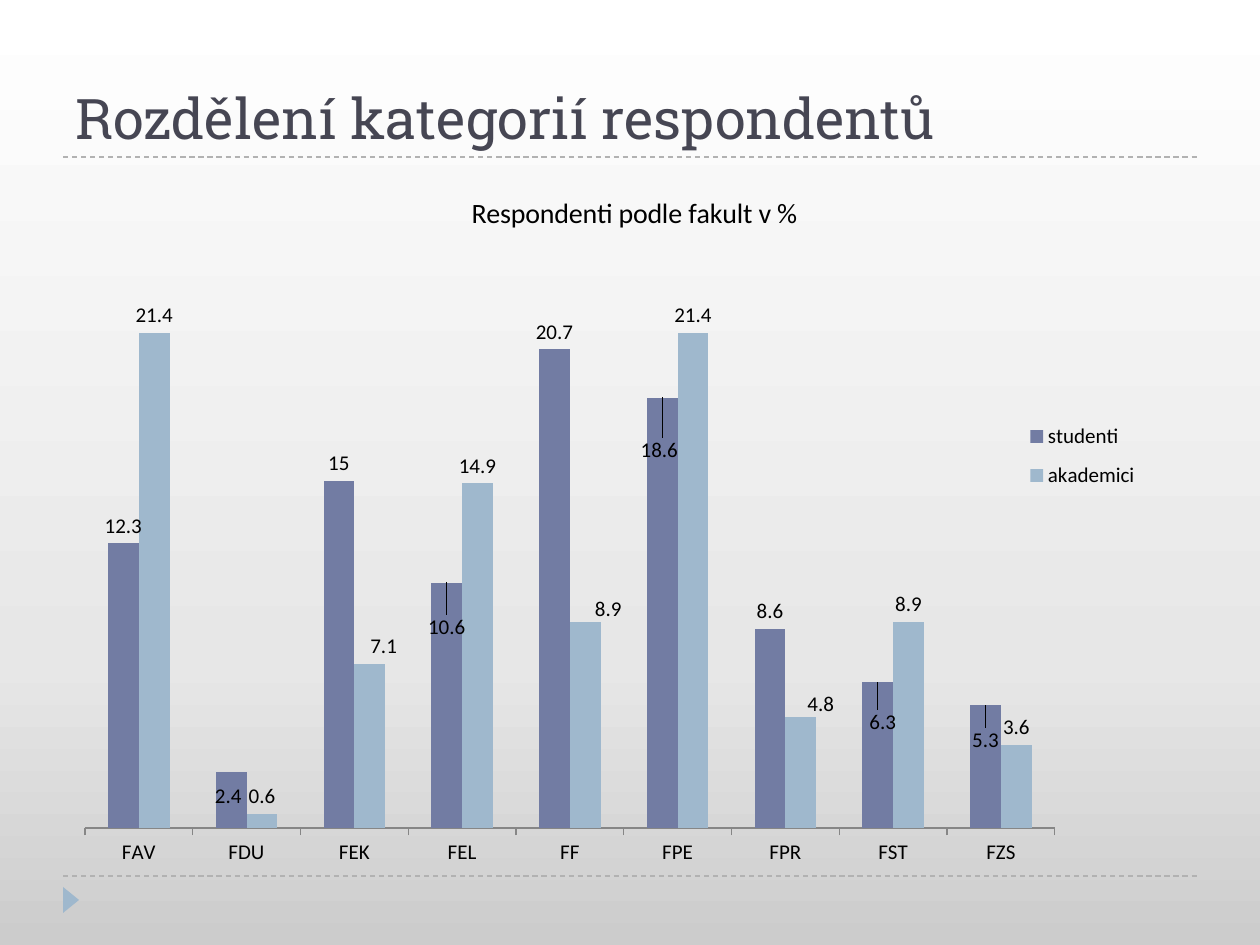
import copy

import pptx
import pptx.chart.data
import pptx.dml.color
import pptx.enum.chart
import pptx.enum.dml
import pptx.enum.shapes
import pptx.enum.text
import pptx.oxml
import pptx.oxml.ns
import pptx.util

SCALE = 914400 / 126  # EMU in one px
COLORS = {
    "title": "464653", "text": "000000", "rule": "B2B2B2", "axis": "868686",
    "studenti": "727CA3", "akademici": "9FB8CD", "marker": "9FB8CD",
}
BACKGROUND = [(0, "CCCCCC"), (0.3, "E7E7E7"), (1, "FFFFFF")]
FACULTIES = ["FAV", "FDU", "FEK", "FEL", "FF", "FPE", "FPR", "FST", "FZS"]
SHARES = {
    "studenti": [12.3, 2.4, 15, 10.6, 20.7, 18.6, 8.6, 6.3, 5.3],
    "akademici": [21.4, 0.6, 7.1, 14.9, 8.9, 21.4, 4.8, 8.9, 3.6],
}
# Labels moved from their usual place: point index -> (right, down) in px
LABEL_SHIFTS = {
    "studenti": {1: (-3, 41), 3: (0, 62), 5: (-3, 70), 7: (5, 57), 8: (0, 52)},
    "akademici": {2: (14, 0), 4: (23, 5), 6: (20, 5)},
}


def px(length):
    return pptx.util.Emu(round(length * SCALE))


def color(name):
    return pptx.dml.color.RGBColor.from_string(COLORS[name])


def format_font(font, size, face="Calibri", tint="text"):
    font.size = pptx.util.Pt(size)
    font.name = face
    font.bold = False
    font.color.rgb = color(tint)


def write_text(frame, text, **font_format):
    para = frame.paragraphs[0]
    span = para.add_run()
    span.text = text
    format_font(span.font, **font_format)


def paint_background(page):
    fill = page.background.fill
    fill.gradient()
    fill.gradient_angle = 90
    stop_list = page.background._cSld.find(".//" + pptx.oxml.ns.qn("a:gsLst"))
    stop_list.append(copy.deepcopy(stop_list[-1]))
    for stop, (position, tint) in zip(fill.gradient_stops, BACKGROUND):
        stop.position = position
        stop.color.rgb = pptx.dml.color.RGBColor.from_string(tint)


def add_rule(page, left, top, width):
    rule = page.shapes.add_connector(
        pptx.enum.shapes.MSO_CONNECTOR.STRAIGHT,
        px(left), px(top), px(left + width), px(top))
    rule.line.color.rgb = color("rule")
    rule.line.width = pptx.util.Pt(0.75)
    rule.line.dash_style = pptx.enum.dml.MSO_LINE.DASH
    rule._element.spPr.append(pptx.oxml.parse_xml(
        "<a:effectLst %s/>" % pptx.oxml.ns.nsdecls("a")))


def add_header(page, left, top, width, height):
    box = page.shapes.add_textbox(px(left), px(top), px(width), px(height))
    frame = box.text_frame
    frame.word_wrap = True
    frame.vertical_anchor = pptx.enum.text.MSO_ANCHOR.BOTTOM
    write_text(frame, "Rozdělení kategorií respondentů",
               size=32, face="Roboto Slab", tint="title")
    add_rule(page, left, top + height, width)


def add_footer(page, left, top, width):
    add_rule(page, left, top, width)
    # Triangle turned to point right
    marker = page.shapes.add_shape(
        pptx.enum.shapes.MSO_SHAPE.ISOSCELES_TRIANGLE,
        px(left - 5), px(top + 16), px(26), px(16))
    marker.rotation = 90
    marker.shadow.inherit = False
    marker.fill.solid()
    marker.fill.fore_color.rgb = color("marker")
    marker.line.fill.background()


def make_layout(**settings):
    items = "".join(f'<c:{key} val="{value}"/>' for key, value in settings.items())
    return pptx.oxml.parse_xml(
        f'<c:layout {pptx.oxml.ns.nsdecls("c")}>'
        f"<c:manualLayout>{items}</c:manualLayout></c:layout>")


def set_layout(owner, layout, after=None):
    """Replace the layout of a chart part, placing it after the named child."""
    for old in owner.findall(pptx.oxml.ns.qn("c:layout")):
        owner.remove(old)
    if after is None:
        owner.insert(0, layout)
    else:
        owner.find(pptx.oxml.ns.qn(after)).addnext(layout)


def format_series(series, width, height):
    series.format.fill.solid()
    series.format.fill.fore_color.rgb = color(series.name)
    series.invert_if_negative = False
    outside = pptx.enum.chart.XL_LABEL_POSITION.OUTSIDE_END
    labels = series.data_labels
    labels.show_value = True
    labels.position = outside
    format_font(labels.font, 12)
    for index, (right, down) in LABEL_SHIFTS[series.name].items():
        label = series.points[index].data_label
        label.position = outside
        format_font(label.font, 12)
        set_layout(label._get_or_add_dLbl(), make_layout(
            x=round(right / width, 4), y=round(down / height, 4)), after="c:idx")


def add_faculty_chart(page, left, top, width, height):
    data = pptx.chart.data.CategoryChartData()
    data.categories = FACULTIES
    for name, values in SHARES.items():
        data.add_series(name, values)
    chart = page.shapes.add_chart(
        pptx.enum.chart.XL_CHART_TYPE.COLUMN_CLUSTERED,
        px(left), px(top), px(width), px(height), data).chart
    format_font(chart.font, 10)

    def area(x, y, w, h, **target):
        return make_layout(
            **target, xMode="edge", yMode="edge",
            x=round(x / width, 4), y=round(y / height, 4),
            w=round(w / width, 4), h=round(h / height, 4))

    # Title
    chart.has_title = True
    write_text(chart.chart_title.text_frame, "Respondenti podle fakult v %", size=16)
    overlay = chart.chart_title._element.get_or_add_overlay() if hasattr(
        chart.chart_title._element, "get_or_add_overlay") else \
        chart.chart_title._element.find(pptx.oxml.ns.qn("c:overlay"))
    if overlay is not None:
        overlay.set("val", "1")

    # Columns
    plot = chart.plots[0]
    plot.gap_width = 150
    plot.overlap = 0
    plot.vary_by_categories = False
    for series in plot.series:
        format_series(series, width, height)
    set_layout(chart._chartSpace.chart.plotArea,
               area(22, 82, 970, 578, layoutTarget="inner"))

    # Axes
    chart.value_axis.minimum_scale = 0
    chart.value_axis.maximum_scale = 25
    chart.value_axis.has_major_gridlines = False
    chart.value_axis.visible = False
    axis = chart.category_axis
    axis.major_tick_mark = pptx.enum.chart.XL_TICK_MARK.OUTSIDE
    axis.format.line.color.rgb = color("axis")
    axis.format.line.width = pptx.util.Pt(0.75)
    format_font(axis.tick_labels.font, 12)

    # Legend
    chart.has_legend = True
    legend = chart.legend
    legend.position = pptx.enum.chart.XL_LEGEND_POSITION.RIGHT
    legend.include_in_layout = False
    format_font(legend.font, 12)
    set_layout(legend._element, area(957, 242, 125, 92), after="c:legendPos")


def main():
    deck = pptx.Presentation()
    deck.slide_width, deck.slide_height = px(1260), px(945)
    page = deck.slides.add_slide(deck.slide_layouts[6])
    paint_background(page)
    add_footer(page, 63, 876, 1134)
    add_header(page, 63, 21, 1134, 136)
    add_faculty_chart(page, 63, 168, 1143, 712)
    deck.save("out.pptx")


if __name__ == "__main__":
    main()
